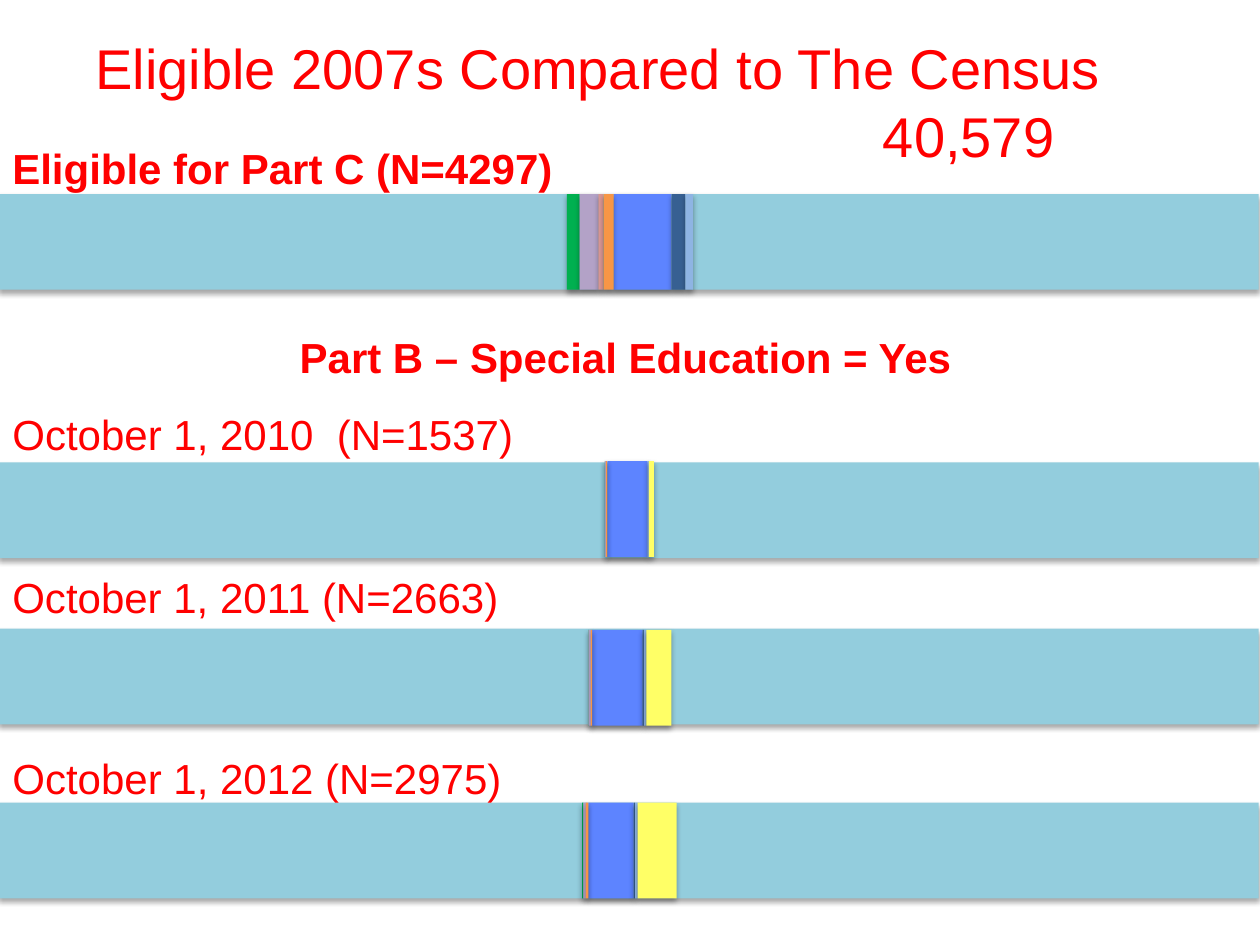
from lxml import etree
from pptx import Presentation
from pptx.dml.color import RGBColor
from pptx.enum.shapes import MSO_SHAPE
from pptx.enum.text import MSO_AUTO_SIZE
from pptx.oxml.ns import qn
from pptx.util import Inches, Pt

RECT = MSO_SHAPE.RECTANGLE
GROW = MSO_AUTO_SIZE.SHAPE_TO_FIT_TEXT

COLS, ROWS = 100, 75
BAND_H = 7.6
THIN = 0.04

# Segment colours from left to right, and the order in which they stack.
HUES = ["00B050", "B3A2C7", "D99694", "F79646",
        "5D84FF", "376092", "8EB4E3", "FFFF66"]
STACK = [4, 5, 6, 0, 1, 2, 3, 7]

# Band top, segment top, segment start, segment widths (None: no segment).
BANDS = [
    (36.7, 36.6, 48.0, [0, 0.1, 0, 0.1, 3.2, None, 0.1, 0.4]),
    (49.9, 50.0, 46.7, [0, 0.2, 0, 0.1, 4.0, 0.1, 0.2, 2.0]),
    (63.7, 63.7, 46.2, [0.1, 0.2, 0, 0.2, 3.6, 0.1, 0.2, 3.1]),
    (15.4, 15.4, 45.0, [1.0, 1.5, 0.4, 0.8, 4.6, 1.1, 0.6, None]),
]

# Text, left, top, width, height, size, bold.
LABELS = [
    ("Eligible 2007s Compared to The Census", 6.6, 2.2, 82.4, 6.4, 32, False),
    ("40,579", 69.1, 7.6, 15.7, 6.4, 32, False),
    ("Eligible for Part C (N=4297)", 0, 10.8, 45.3, 5, 24, True),
    ("Part B – Special Education = Yes", 22.8, 25.8, 54.2, 5, 24, True),
    ("October 1, 2010  (N=1537)", 0, 31.9, 42.2, 5, 24, False),
    ("October 1, 2011 (N=2663)", 0, 44.9, 41, 5, 24, False),
    ("October 1, 2012 (N=2975)", 0, 59.2, 41.2, 5, 24, False),
]


def color(code):
    return RGBColor.from_string(code)


class Deck:
    """Holds the style, the presentation and the current slide."""

    font = "Arial"
    ink = "FF0000"
    water = "93CDDD"

    def __init__(self):
        self.prs = Presentation()
        self.prs.slide_width = Inches(10)
        self.prs.slide_height = Inches(7.5)
        self.slide = self.prs.slides.add_slide(self.prs.slide_layouts[6])

    def place(self, left, top, width, height):
        """Turn grid columns and rows into slide lengths."""
        col = self.prs.slide_width / COLS
        row = self.prs.slide_height / ROWS
        return [round(n) for n in
                (left * col, top * row, width * col, height * row)]

    def shade(self, shape):
        """Put a soft shadow right below the shape."""
        shape.shadow.inherit = False
        effects = shape._element.spPr.find(qn("a:effectLst"))
        drop = etree.SubElement(
            effects, qn("a:outerShdw"), blurRad=str(Pt(3.1)),
            dist=str(Pt(1.8)), dir="5400000", rotWithShape="0")
        tone = etree.SubElement(drop, qn("a:srgbClr"), val="000000")
        etree.SubElement(tone, qn("a:alpha"), val="35000")

    def block(self, home, box, fill):
        shape = home.add_shape(RECT, *self.place(*box))
        shape.fill.solid()
        shape.fill.fore_color.rgb = color(fill)
        shape.line.fill.background()
        self.shade(shape)

    def band(self, top, rise, start, widths):
        """Draw a full-width band with its group of segments."""
        self.block(self.slide.shapes, (-0.1, top, COLS, BAND_H), self.water)
        group = self.slide.shapes.add_group_shape()
        for i in STACK:
            if widths[i] is None:
                continue
            left = start + sum(w or 0 for w in widths[:i])
            width = max(widths[i], THIN)
            self.block(group.shapes, (left, rise, width, BAND_H), HUES[i])

    def label(self, text, left, top, width, height, size, bold):
        box = self.slide.shapes.add_textbox(
            *self.place(left, top, width, height))
        frame = box.text_frame
        frame.text = text
        frame.word_wrap = False
        frame.auto_size = GROW
        font = frame.paragraphs[0].runs[0].font
        font.name = self.font
        font.size = Pt(size)
        font.bold = bold
        font.color.rgb = color(self.ink)


def main():
    deck = Deck()
    for band in BANDS:
        deck.band(*band)
    for label in LABELS:
        deck.label(*label)
    deck.prs.save("out.pptx")


if __name__ == "__main__":
    main()
